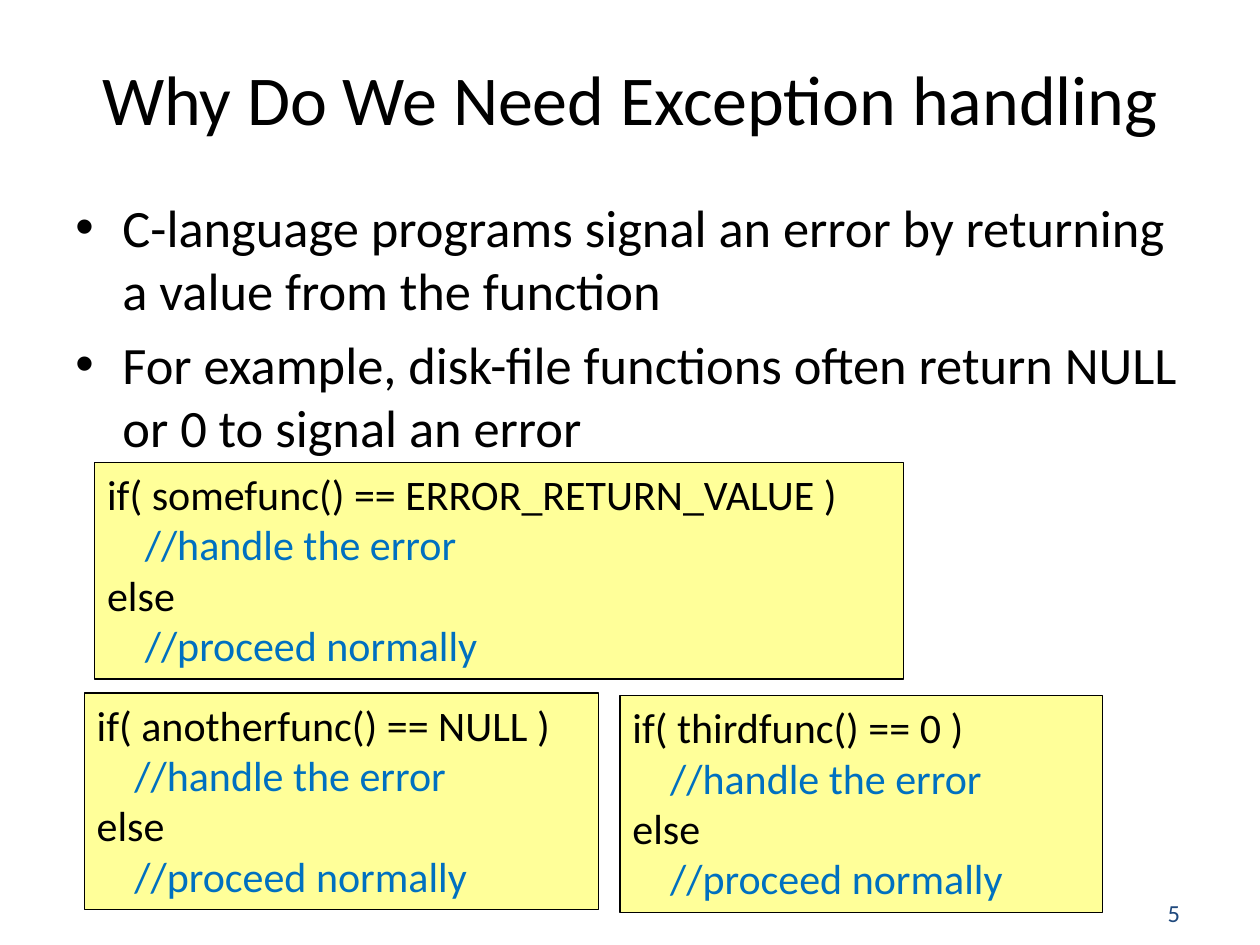
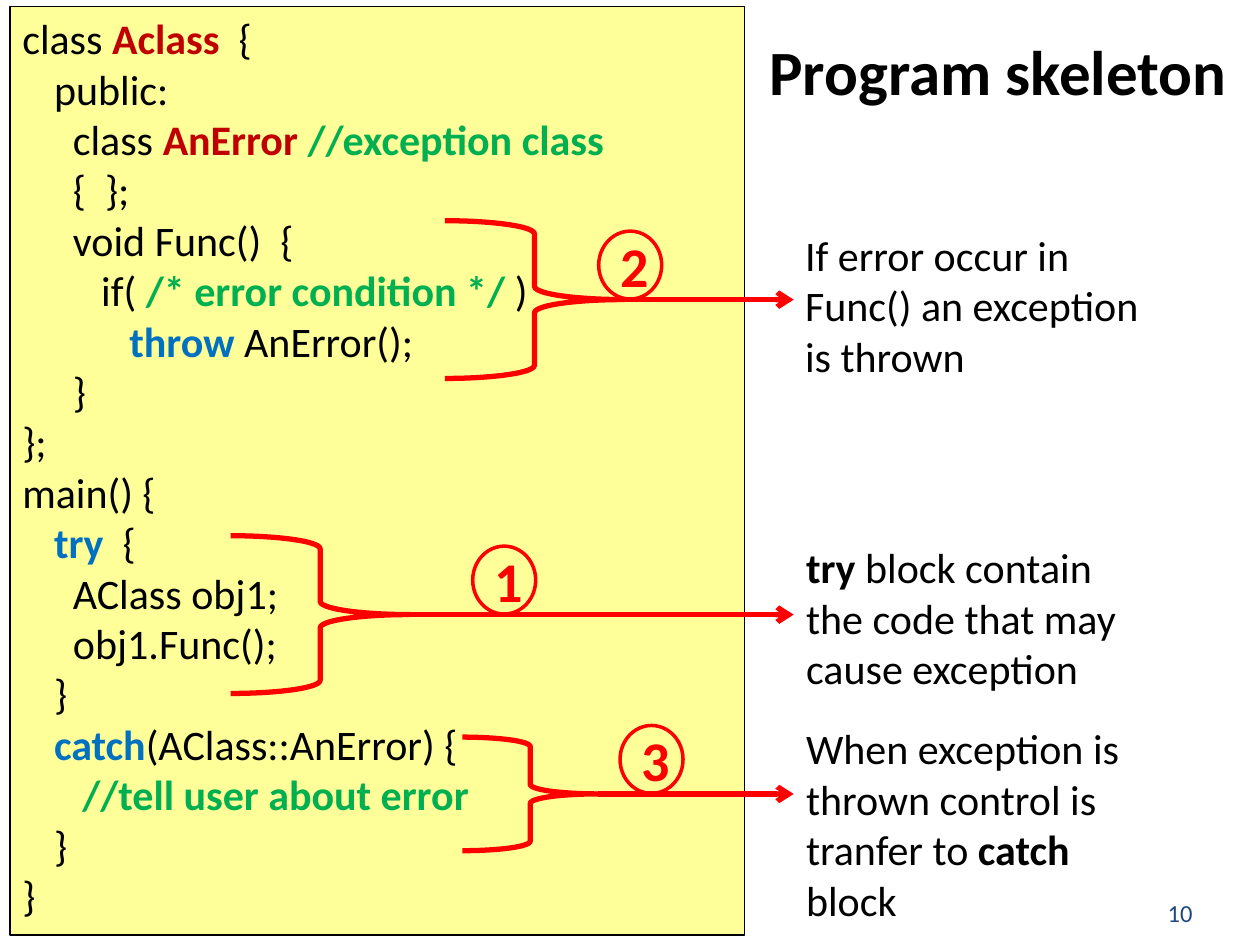
import pptx
import pptx.util
import pptx.dml.color
import pptx.enum.shapes
import pptx.enum.text
import pptx.oxml
import pptx.oxml.ns

Cm = pptx.util.Cm
Pt = pptx.util.Pt
Shape = pptx.enum.shapes.MSO_SHAPE
Align = pptx.enum.text.PP_ALIGN
Anchor = pptx.enum.text.MSO_ANCHOR

BLACK, RED, NAVY, YELLOW = "000000", "FF0000", "1F497D", "FFFF00"
BLUE, GREEN, CRIMSON = "0070C0", "00B050", "C00000"
NORMAL = {}
STRONG = {"bold": True}
REMARK = {"color": BLUE}
KEYWORD = {"color": BLUE, "bold": True}
COMMENT = {"color": GREEN, "bold": True}
CLASS_NAME = {"color": CRIMSON, "bold": True}

SPACE = 0.19
MEMBER = 0.64


def rgb(value):
    return pptx.dml.color.RGBColor.from_string(value)


def add_element(parent, tag, **attributes):
    element = pptx.oxml.parse_xml(f"<{tag} {pptx.oxml.ns.nsdecls('a')}/>")
    for name, value in attributes.items():
        element.set(name, value)
    parent.append(element)
    return element


def indented(spaces):
    return MEMBER + spaces * SPACE


class Deck:
    font = "Calibri"

    def __init__(self):
        self.presentation = pptx.Presentation()
        self.presentation.slide_width = Cm(25.4)
        self.presentation.slide_height = Cm(19.05)
        self.slide = None

    def new_slide(self, title, number, box, size, bold=False):
        layout = self.presentation.slide_layouts[5]
        self.slide = self.presentation.slides.add_slide(layout)
        shape = self.slide.shapes.title
        for name, value in zip(("left", "top", "width", "height"), box):
            setattr(shape, name, Cm(value))
        shape.text_frame.auto_size = pptx.enum.text.MSO_AUTO_SIZE.NONE
        shape.text_frame.vertical_anchor = Anchor.MIDDLE
        style = {"size": size, "bold": bold}
        self.fill_text(shape, [(0, (title, style))], alignment=Align.CENTER)
        self.text((23.29, 17.98, 1.7, 0.84),
                  [(0, (number, {"size": 14, "color": NAVY}))], Anchor.MIDDLE)

    def fill_text(self, shape, rows, **paragraph_format):
        frame = shape.text_frame
        frame.word_wrap = True
        for index, (indent, *runs) in enumerate(rows):
            paragraph = frame.add_paragraph() if index else frame.paragraphs[0]
            for name, value in {"alignment": Align.LEFT, **paragraph_format}.items():
                setattr(paragraph, name, value)
            if indent:
                paragraph._p.get_or_add_pPr().set("marL", str(Cm(indent)))
            for text, style in runs:
                run = paragraph.add_run()
                run.text = text
                values = {"size": 24, "color": BLACK, "bold": False, **style}
                run.font.color.rgb = rgb(values.pop("color"))
                values["size"] = Pt(values["size"])
                for name, value in {"name": self.font, **values}.items():
                    setattr(run.font, name, value)

    def text(self, box, rows, anchor=Anchor.TOP, **paragraph_format):
        shape = self.slide.shapes.add_textbox(*map(Cm, box))
        shape.text_frame.vertical_anchor = anchor
        self.fill_text(shape, rows, **paragraph_format)
        return shape

    def bullets(self, box, items):
        rows = [(0.95, (item, {"size": 30})) for item in items]
        shape = self.text(box, rows, space_before=Pt(6))
        for paragraph in shape.text_frame.paragraphs:
            properties = paragraph._p.get_or_add_pPr()
            properties.set("indent", str(-Cm(0.95)))
            add_element(properties, "a:buFont", typeface="Arial")
            add_element(properties, "a:buChar", char="•")

    def outline(self, kind, box, color, width):
        shape = self.slide.shapes.add_shape(kind, *map(Cm, box))
        shape.shadow.inherit = False
        shape.fill.background()
        shape.line.color.rgb = rgb(color)
        shape.line.width = Pt(width)
        return shape

    def code(self, box, rows):
        shape = self.outline(Shape.RECTANGLE, box, BLACK, 0.75)
        shape.fill.solid()
        shape.fill.fore_color.rgb = rgb(YELLOW)
        color = shape._element.spPr.find(".//" + pptx.oxml.ns.qn("a:srgbClr"))
        add_element(color, "a:alpha", val="40000")
        shape.text_frame.vertical_anchor = Anchor.TOP
        self.fill_text(shape, rows)

    def arrow(self, left, right, y):
        connector = self.slide.shapes.add_connector(
            pptx.enum.shapes.MSO_CONNECTOR.STRAIGHT, Cm(left), Cm(y), Cm(right), Cm(y))
        connector.line.color.rgb = rgb(RED)
        connector.line.width = Pt(3)
        add_element(connector.line._get_or_add_ln(), "a:tailEnd", type="arrow")
        add_element(connector._element.spPr, "a:effectLst")

    def step(self, number, brace, circle_left):
        left, top, width, height = brace
        middle = top + height / 2
        self.outline(Shape.RIGHT_BRACE, brace, RED, 3)
        self.arrow(left + width, 16, middle)
        circle = self.outline(
            Shape.OVAL, (circle_left, middle - 1.38, 1.27, 1.37), RED, 2)
        circle.text_frame.vertical_anchor = Anchor.MIDDLE
        style = {"size": 32, "color": RED, "bold": True}
        self.fill_text(circle, [(0, (number, style))], alignment=Align.CENTER)


def build_reasons(deck):
    deck.new_slide("Why Do We Need Exception handling", "5",
                   (1.27, 0.97, 22.86, 1.98), 40)
    deck.bullets((1.27, 3.81, 22.86, 5.51), [
        "C-language programs signal an error by returning a value from the function",
        "For example, disk-file functions often return NULL or 0 to signal an error",
    ])
    checks = [
        ("somefunc() == ERROR_RETURN_VALUE", (1.91, 9.32, 16.31, 4.37)),
        ("anotherfunc() == NULL", (1.7, 13.97, 10.36, 4.37)),
        ("thirdfunc() == 0", (12.5, 14.02, 9.73, 4.37)),
    ]
    for condition, box in checks:
        deck.code(box, [
            (0, (f"if( {condition} )", NORMAL)),
            (4 * SPACE, ("//handle the error", REMARK)),
            (0, ("else", NORMAL)),
            (4 * SPACE, ("//proceed normally", REMARK)),
        ])


def build_skeleton(deck):
    deck.new_slide("Program skeleton", "10", (15.04, 0.43, 10.16, 1.98), 36, True)
    deck.code((0.2, 0.13, 14.81, 18.72), [
        (0, ("class ", NORMAL), ("Aclass", CLASS_NAME), ("  {", NORMAL)),
        (MEMBER, ("public:", NORMAL)),
        (indented(2), ("class ", NORMAL), ("AnError ", CLASS_NAME),
         ("//exception class", COMMENT)),
        (indented(2), ("{  };", NORMAL)),
        (indented(2), ("void Func()  {", NORMAL)),
        (indented(5), ("if( ", NORMAL), ("/* error condition */ ", COMMENT),
         (")", NORMAL)),
        (indented(8), ("throw ", KEYWORD), ("AnError();", NORMAL)),
        (indented(2), ("}", NORMAL)),
        (0, ("};", NORMAL)),
        (0, ("main() {", NORMAL)),
        (MEMBER, ("try  ", KEYWORD), ("{", NORMAL)),
        (indented(2), ("AClass obj1;", NORMAL)),
        (indented(2), ("obj1.Func();", NORMAL)),
        (MEMBER, ("}", NORMAL)),
        (MEMBER, ("catch", KEYWORD), ("(AClass::AnError) {", NORMAL)),
        (indented(3), ("//tell user about error", COMMENT)),
        (MEMBER, ("}", NORMAL)),
        (0, ("}", NORMAL)),
    ])
    deck.text((16, 10.8, 7.26, 3.33), [
        (0, ("try", STRONG), (" block contain the code that may cause exception", NORMAL))])
    deck.text((15.98, 4.5, 7.26, 3.33), [
        (0, ("If error occur in Func() an exception is thrown", NORMAL))])
    deck.step("1", (4.65, 10.8, 3.61, 3.18), 9.53)
    deck.step("2", (8.97, 4.45, 3.61, 3.18), 12.07)
    deck.step("3", (9.32, 14.86, 2.74, 2.29), 12.5)
    deck.text((16, 14.45, 7.26, 4.37), [
        (0, ("When exception is thrown control is tranfer to ", NORMAL),
         ("catch", STRONG), (" block", NORMAL))])


def main():
    deck = Deck()
    build_reasons(deck)
    build_skeleton(deck)
    deck.presentation.save("out.pptx")


if __name__ == "__main__":
    main()
